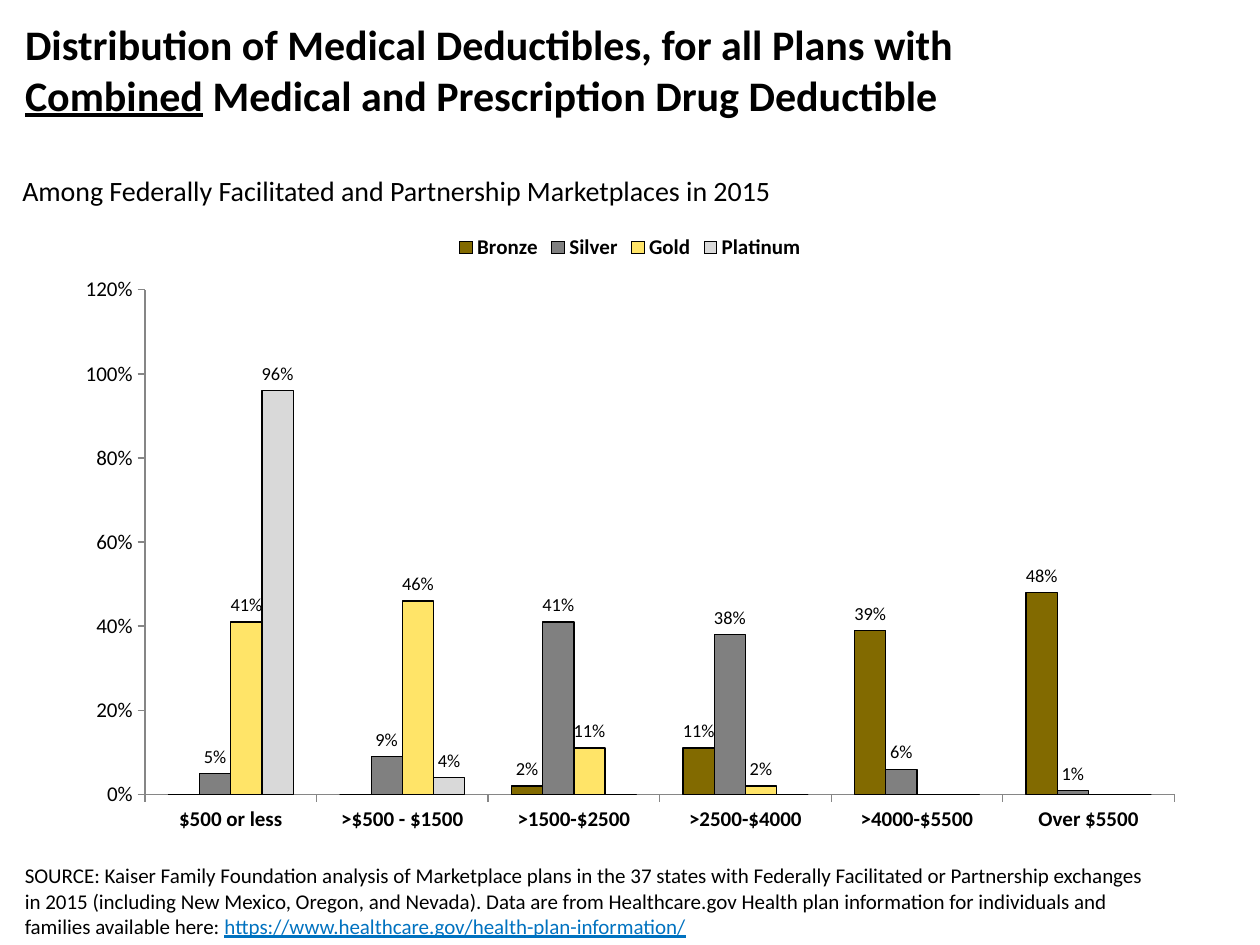
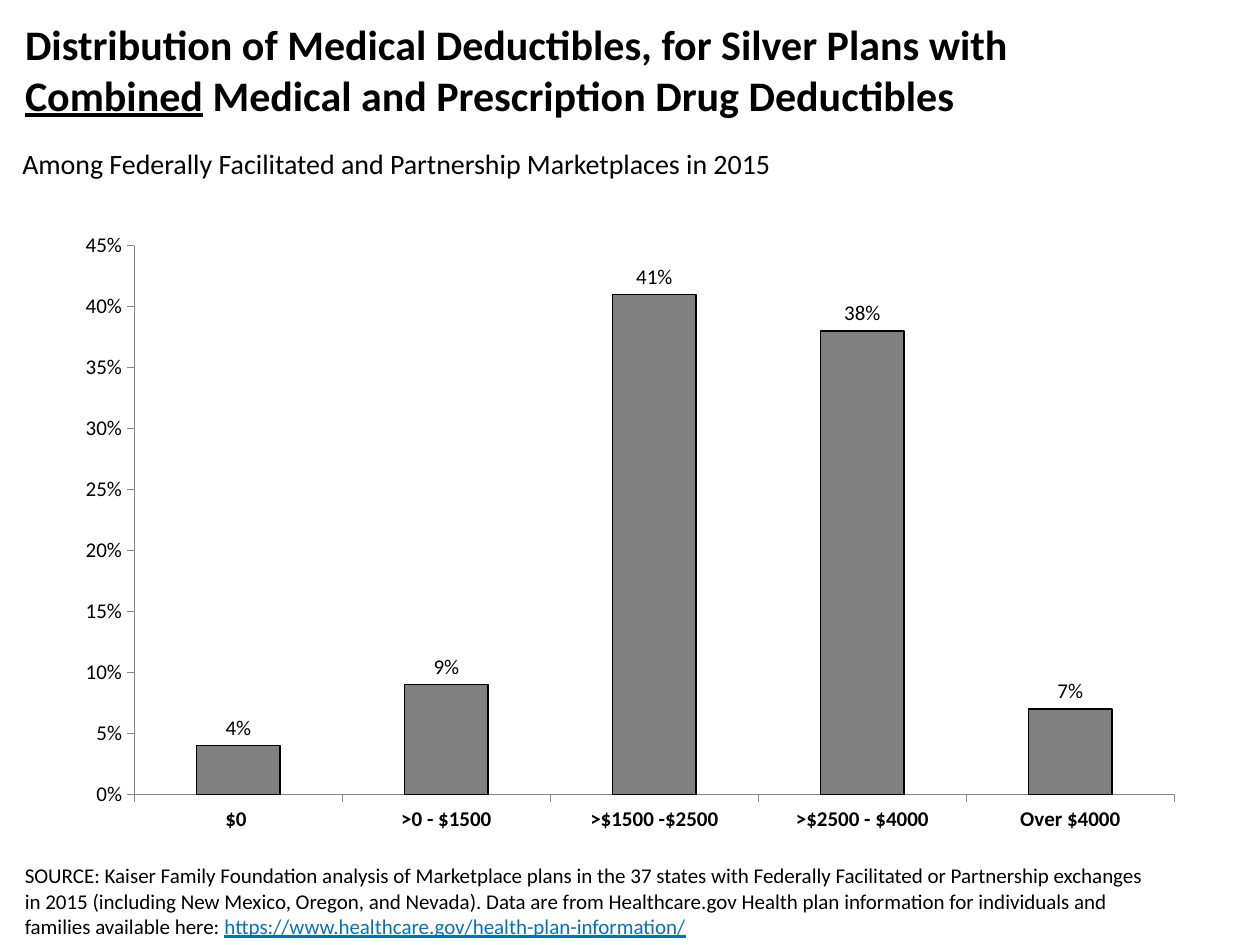
from pptx import Presentation
from pptx.chart.data import CategoryChartData
from pptx.dml.color import RGBColor
from pptx.enum.chart import XL_CHART_TYPE, XL_LABEL_POSITION, XL_LEGEND_POSITION, XL_TICK_MARK
from pptx.enum.text import MSO_ANCHOR, MSO_AUTO_SIZE, PP_ALIGN
from pptx.util import Cm, Pt

BLACK = RGBColor(0x00, 0x00, 0x00)
AXIS_GRAY = RGBColor(0x86, 0x86, 0x86)
LINK_BLUE = RGBColor(0x00, 0x72, 0xC0)
BRONZE = RGBColor(0x82, 0x6A, 0x00)
SILVER = RGBColor(0x80, 0x80, 0x80)
GOLD = RGBColor(0xFF, 0xE4, 0x68)
PLATINUM = RGBColor(0xD9, 0xD9, 0xD9)

BASE_FONT = {"name": "Calibri", "color": BLACK}
TITLE_FONT = BASE_FONT | {"size": Pt(24), "bold": True}
SUBTITLE_FONT = BASE_FONT | {"size": Pt(16), "bold": False}
SMALL_FONT = BASE_FONT | {"size": Pt(12), "bold": False}
BOLD_FONT = SMALL_FONT | {"bold": True}

SUBTITLE = "Among Federally Facilitated and Partnership Marketplaces in 2015"
SOURCE = (
    "SOURCE: Kaiser Family Foundation analysis of Marketplace plans in the 37 states with "
    "Federally Facilitated or Partnership exchanges in 2015 (including New Mexico, Oregon, and "
    "Nevada). Data are from Healthcare.gov Health plan information for individuals and families "
    "available here: "
)
SOURCE_LINK = "https://www.healthcare.gov/health-plan-information/"

SLIDES = [
    {
        "title": (
            "Distribution of Medical Deductibles, for all Plans with ",
            "Combined",
            " Medical and Prescription Drug Deductible",
        ),
        "subtitle_top": Cm(3.38),
        "categories": [
            "$500 or less", ">$500 - $1500", ">1500-$2500",
            ">2500-$4000", ">4000-$5500", "Over $5500",
        ],
        "series": [
            ("Bronze", BRONZE, (0, 0, 0.02, 0.11, 0.39, 0.48)),
            ("Silver", SILVER, (0.05, 0.09, 0.41, 0.38, 0.06, 0.01)),
            ("Gold", GOLD, (0.41, 0.46, 0.11, 0.02, 0, 0)),
            ("Platinum", PLATINUM, (0.96, 0.04, 0, 0, 0, 0)),
        ],
        "axis_scale": {"minimum_scale": 0, "maximum_scale": 1.2, "major_unit": 0.2},
        "label_size": Pt(10.5),
    },
    {
        "title": (
            "Distribution of Medical Deductibles, for Silver Plans with ",
            "Combined",
            " Medical and Prescription Drug Deductibles",
        ),
        "subtitle_top": Cm(2.82),
        "categories": ["$0 ", ">0 - $1500", ">$1500 -$2500", ">$2500 - $4000", "Over $4000"],
        "series": [("Series 1", SILVER, (0.04, 0.09, 0.41, 0.38, 0.07))],
        "axis_scale": {"minimum_scale": 0, "maximum_scale": 0.45, "major_unit": 0.05},
        "label_size": Pt(12),
    },
]


def set_attributes(target, values):
    for name, value in values.items():
        setattr(target, name, value)


def format_font(font, values):
    for name, value in values.items():
        if name == "color":
            font.color.rgb = value
        else:
            setattr(font, name, value)


def add_run(paragraph, text, font_values):
    run = paragraph.add_run()
    run.text = text
    format_font(run.font, font_values)


def add_title(slide, parts):
    first_line, underlined, rest = parts
    title = slide.shapes.title
    set_attributes(title, {
        "left": Cm(0.25), "top": Cm(0.25), "width": Cm(24.9), "height": Cm(2.54),
    })
    set_attributes(title.text_frame, {
        "vertical_anchor": MSO_ANCHOR.TOP, "word_wrap": True, "auto_size": MSO_AUTO_SIZE.NONE,
    })
    paragraph = title.text_frame.paragraphs[0]
    paragraph.alignment = PP_ALIGN.LEFT
    format_font(paragraph.font, TITLE_FONT)
    add_run(paragraph, first_line, TITLE_FONT)
    paragraph.add_line_break()
    add_run(paragraph, underlined, TITLE_FONT | {"underline": True})
    add_run(paragraph, rest, TITLE_FONT)


def add_text(slide, box, runs, wrap=True):
    text_frame = slide.shapes.add_textbox(*box).text_frame
    text_frame.word_wrap = wrap
    for text, font_values in runs:
        add_run(text_frame.paragraphs[0], text, font_values)


def format_axis(axis, font_values):
    set_attributes(axis, {
        "has_major_gridlines": False,
        "major_tick_mark": XL_TICK_MARK.OUTSIDE,
        "minor_tick_mark": XL_TICK_MARK.NONE,
    })
    axis.format.line.color.rgb = AXIS_GRAY
    axis.format.line.width = Pt(0.75)
    format_font(axis.tick_labels.font, font_values)


def add_deductible_chart(slide, content):
    chart_data = CategoryChartData(number_format="0%")
    chart_data.categories = content["categories"]
    for name, _, values in content["series"]:
        chart_data.add_series(name, values)
    chart = slide.shapes.add_chart(
        XL_CHART_TYPE.COLUMN_CLUSTERED, Cm(1.27), Cm(4.45), Cm(22.86), Cm(12.57), chart_data
    ).chart
    chart.has_title = False
    format_font(chart.font, BASE_FONT | {"size": Pt(18)})

    chart.has_legend = len(content["series"]) > 1
    if chart.has_legend:
        set_attributes(chart.legend, {
            "position": XL_LEGEND_POSITION.TOP, "include_in_layout": False,
        })
        format_font(chart.legend.font, BOLD_FONT)

    format_axis(chart.category_axis, BOLD_FONT)
    format_axis(chart.value_axis, SMALL_FONT)
    set_attributes(chart.value_axis, content["axis_scale"])
    set_attributes(chart.value_axis.tick_labels, {
        "number_format": "0%", "number_format_is_linked": False,
    })

    plot = chart.plots[0]
    set_attributes(plot, {"gap_width": 150, "overlap": 0, "vary_by_categories": False})
    for series, (_, color, _) in zip(plot.series, content["series"]):
        series.format.fill.solid()
        series.format.fill.fore_color.rgb = color
        series.format.line.color.rgb = BLACK
        series.format.line.width = Pt(0.75)
        labels = series.data_labels
        set_attributes(labels, {
            "show_value": True,
            "number_format": "0%;;",
            "number_format_is_linked": False,
            "position": XL_LABEL_POSITION.OUTSIDE_END,
        })
        format_font(labels.font, SMALL_FONT | {"size": content["label_size"]})


def main():
    presentation = Presentation()
    set_attributes(presentation, {"slide_width": Cm(25.4), "slide_height": Cm(19.05)})
    title_only = presentation.slide_layouts.get_by_name("Title Only")
    for content in SLIDES:
        slide = presentation.slides.add_slide(title_only)
        add_title(slide, content["title"])
        add_deductible_chart(slide, content)
        add_text(
            slide,
            (Cm(0.2), content["subtitle_top"], Cm(15.9), Cm(0.94)),
            [(SUBTITLE, SUBTITLE_FONT)],
            wrap=False,
        )
        add_text(
            slide,
            (Cm(0.25), Cm(17.27), Cm(23.11), Cm(1.52)),
            [
                (SOURCE, SMALL_FONT),
                (SOURCE_LINK, SMALL_FONT | {"color": LINK_BLUE, "underline": True}),
            ],
        )
    presentation.save("out.pptx")


if __name__ == "__main__":
    main()
